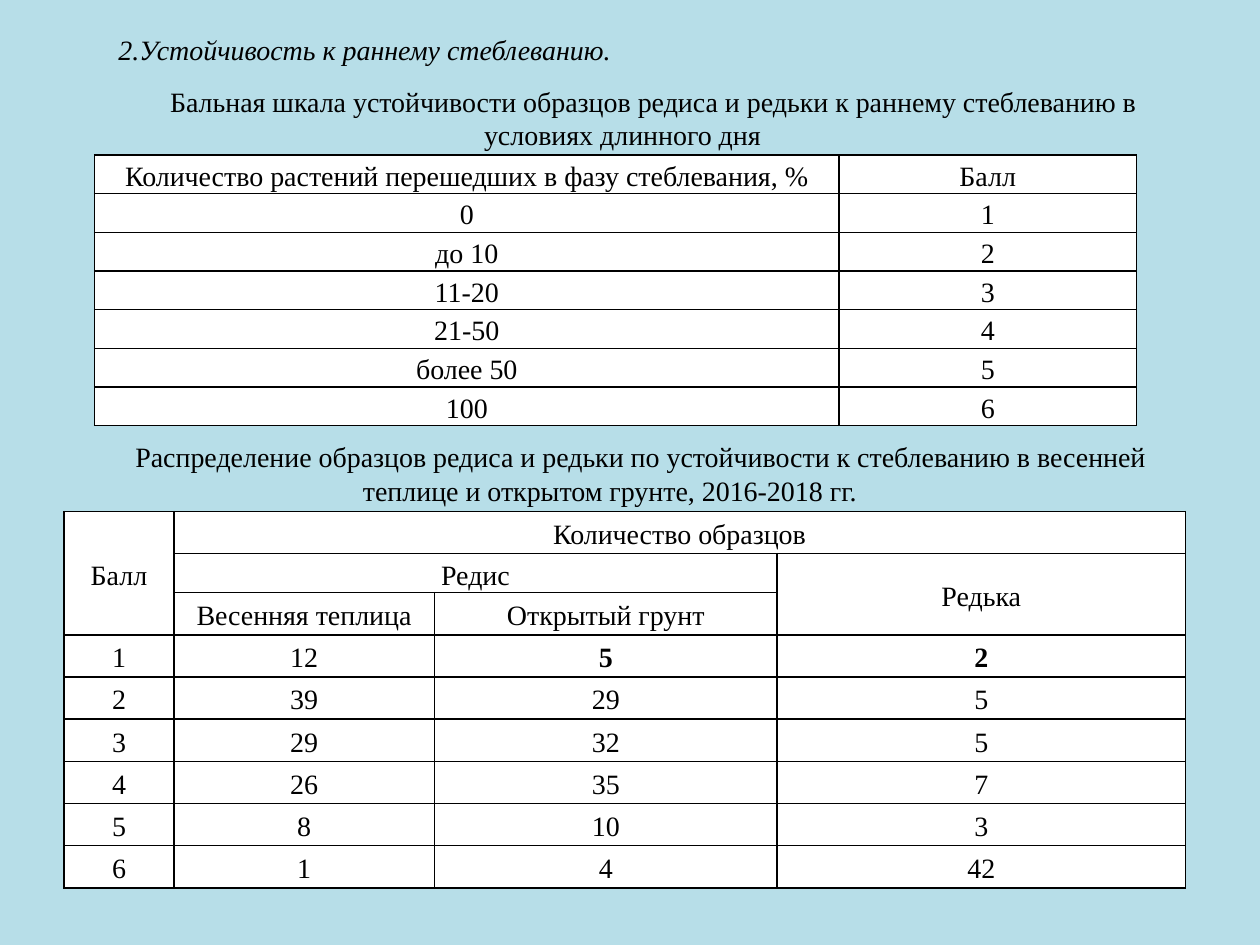
from lxml.etree import SubElement
from pptx import Presentation
from pptx.dml.color import RGBColor
from pptx.enum.text import MSO_ANCHOR, MSO_AUTO_SIZE, PP_ALIGN
from pptx.oxml.ns import qn
from pptx.util import Pt

FONT = "Times New Roman"
SIZE = Pt(16)
INDENT = Pt(35.3)
BACK = RGBColor(0xB7, 0xDE, 0xE8)
WHITE = RGBColor(0xFF, 0xFF, 0xFF)
BLACK = RGBColor(0, 0, 0)

SCALE = [
    ["Количество растений перешедших в фазу стеблевания, %", "Балл"],
    ["0", "1"],
    ["до 10", "2"],
    ["11-20", "3"],
    ["21-50", "4"],
    ["более 50", "5"],
    ["100", "6"],
]
COUNTS = [
    ["Балл", "Количество образцов", "", ""],
    ["", "Редис", "", "Редька"],
    ["", "Весенняя теплица", "Открытый грунт", ""],
    ["1", "12", "5", "2"],
    ["2", "39", "29", "5"],
    ["3", "29", "32", "5"],
    ["4", "26", "35", "7"],
    ["5", "8", "10", "3"],
    ["6", "1", "4", "42"],
]
# Each merge: first row, first column, last row, last column
SPANS = [(0, 0, 2, 0), (0, 1, 0, 3), (1, 1, 1, 2), (1, 3, 2, 3)]
BOLD = {(3, 2), (3, 3)}


def style(par, align, bold=False, italic=False):
    par.alignment = align
    for run in par.runs:
        font = run.font
        font.name, font.size = FONT, SIZE
        font.bold, font.italic = bold, italic
        font.color.rgb = BLACK


def write(shape, text, anchor, align, italic=False):
    frame = shape.text_frame
    frame.text = text
    frame.word_wrap = True
    frame.auto_size = MSO_AUTO_SIZE.NONE
    frame.vertical_anchor = anchor
    par = frame.paragraphs[0]
    style(par, align, italic=italic)
    par._p.get_or_add_pPr().set("indent", str(INDENT))


def add_title(slide, box, text):
    title = slide.shapes.title
    title.left, title.top, title.width, title.height = map(Pt, box)
    write(title, text, MSO_ANCHOR.MIDDLE, PP_ALIGN.LEFT, italic=True)


def add_label(slide, box, text):
    label = slide.shapes.add_textbox(*map(Pt, box))
    write(label, text, MSO_ANCHOR.TOP, PP_ALIGN.CENTER)


def add_lines(cell):
    props = cell._tc.get_or_add_tcPr()
    for side in ("a:lnL", "a:lnR", "a:lnT", "a:lnB"):
        line = SubElement(props, qn(side), w=str(Pt(1)))
        fill = SubElement(line, qn("a:solidFill"))
        SubElement(fill, qn("a:srgbClr"), val=str(BLACK))


def add_grid(slide, box, rows, widths, heights, spans=(), bold=()):
    table = slide.shapes.add_table(len(rows), len(widths), *map(Pt, box)).table
    table.first_row = table.horz_banding = False
    for col, width in zip(table.columns, widths):
        col.width = Pt(width)
    for row, height in zip(table.rows, heights):
        row.height = Pt(height)

    # Cells
    for r, row in enumerate(rows):
        for c, text in enumerate(row):
            cell = table.cell(r, c)
            add_lines(cell)
            cell.fill.solid()
            cell.fill.fore_color.rgb = WHITE
            cell.vertical_anchor = MSO_ANCHOR.MIDDLE
            cell.margin_left = cell.margin_right = Pt(5)
            cell.margin_top = cell.margin_bottom = 0
            if text:
                cell.text_frame.text = text
                par = cell.text_frame.paragraphs[0]
                par.line_spacing = 1.15
                style(par, PP_ALIGN.CENTER, bold=(r, c) in bold)

    # Merged headings
    for top, left, low, right in spans:
        table.cell(top, left).merge(table.cell(low, right))


def main():
    deck = Presentation()
    deck.slide_width, deck.slide_height = Pt(720), Pt(540)
    slide = deck.slides.add_slide(deck.slide_layouts[5])
    slide.background.fill.solid()
    slide.background.fill.fore_color.rgb = BACK

    add_title(slide, (25.2, 15.1, 357, 26.6),
              "2.Устойчивость к раннему стеблеванию.")

    # Scoring scale
    add_grid(slide, (54, 88.6, 595.4, 154.7), SCALE, (425.5, 169.9),
             [22.1] * len(SCALE))
    add_label(slide, (36.7, 44.5, 638, 67),
              "Бальная шкала устойчивости образцов редиса и редьки "
              "к раннему стеблеванию в условиях длинного дня")

    # Sample counts
    add_grid(slide, (36.7, 292.3, 640.8, 215.3), COUNTS,
             (62.6, 149, 195.8, 233.3), [24.1, 22.3] + [24.1] * 7,
             SPANS, BOLD)
    add_label(slide, (25.2, 247.7, 646.6, 46),
              "Распределение образцов редиса и редьки по устойчивости "
              "к стеблеванию в весенней теплице и открытом грунте, "
              "2016-2018 гг.")

    deck.save("out.pptx")


if __name__ == "__main__":
    main()
